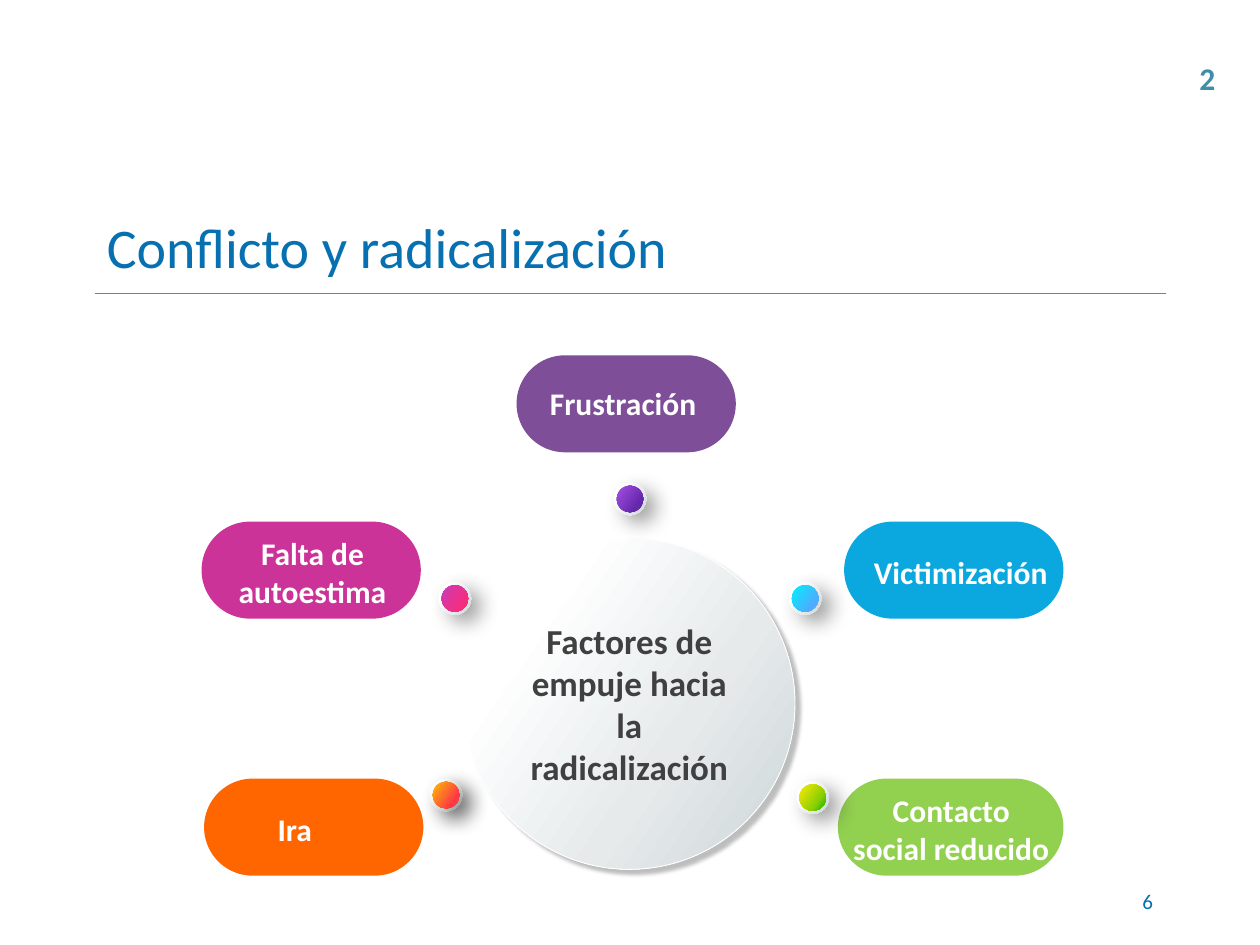
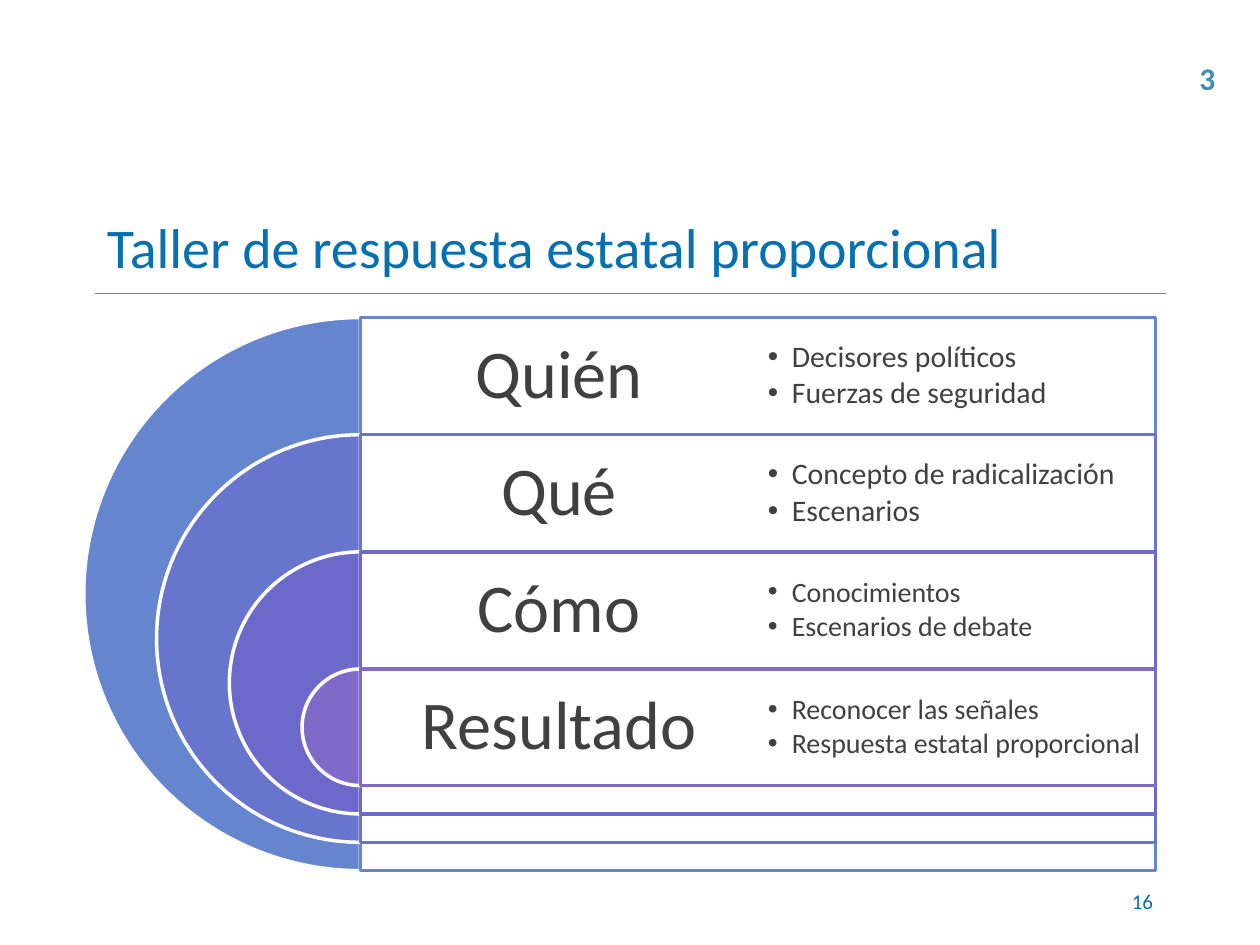
from lxml import etree
from pptx import Presentation
from pptx.dml.color import RGBColor
from pptx.enum.shapes import MSO_CONNECTOR, MSO_SHAPE
from pptx.enum.text import MSO_ANCHOR, PP_ALIGN
from pptx.oxml.ns import qn
from pptx.util import Emu, Inches, Pt

LINE = MSO_CONNECTOR.STRAIGHT
OVAL, PILL = MSO_SHAPE.OVAL, MSO_SHAPE.ROUNDED_RECTANGLE
PIE, BOX = MSO_SHAPE.PIE, MSO_SHAPE.RECTANGLE
TOP, MIDDLE = MSO_ANCHOR.TOP, MSO_ANCHOR.MIDDLE
LEFT, CENTER, RIGHT = PP_ALIGN.LEFT, PP_ALIGN.CENTER, PP_ALIGN.RIGHT

WIDTH, HEIGHT = Inches(10), Inches(7.5)
COLUMNS, ROWS = 100, 75
FONT = "Calibri"
BLUE, CYAN, TEAL, GRAY, WHITE = "0770B1", "0BA7DF", "3E8EA9", "404040", "FFFFFF"
SILVER = [(23, WHITE), (63, "E6EAEB"), (100, "CDD5D8")]
HUB_SHADOW = {"alpha": 26, "blur": 2, "distance": 3.7}
DOT_SHADOW = {"alpha": 38, "blur": 12, "distance": 7.1}

PILLS = [
    ((16.2, 61.8, 17.4), "FF6600"),
    ((16, 41.4, 17.4), "CC3399"),
    ((41, 28.2, 17.4), "7E4E99"),
    ((67, 41.4, 17.4), CYAN),
    ((66.5, 61.8, 17.9), "92D050"),
]
DOTS = [
    ((34.1, 61.8), [(0, "FFC203"), (37, "FF7D25"), (77, "FF3847")], DOT_SHADOW),
    ((34.8, 46.2), [(1, "C23FC6"), (36, "E1359B"), (98, "FF2A70")], None),
    ((48.7, 38.3), [(0, "A852E6"), (37, "863DC8"), (77, "6428AA")], None),
    ((62.6, 46.2), [(0, "00F2FE"), (37, "28CFFE"), (77, "4FACFE")], None),
    ((63.2, 62), [(0, "FFEA03"), (71, "85CE02"), (98, "0CB100")], None),
]
LABELS = [
    ("Ira", (18.8, 63.9, 9.2, 3.8)),
    ("Falta de autoestima", (16.7, 42, 16.2, 6.8)),
    ("Frustración", (42.7, 30.1, 13.5, 3.8)),
    ("Victimización", (68.8, 43.5, 14.9, 3.8)),
    ("Contacto social reducido", (67.3, 62.4, 16.4, 6.8)),
]
RINGS = [
    ("Quién", "6585CF", 17, ["Decisores políticos", "Fuerzas de seguridad"]),
    ("Qué", "6775CD", 17, ["Concepto de radicalización", "Escenarios"]),
    ("Cómo", "6C69CB", 16, ["Conocimientos", "Escenarios de debate"]),
    ("Resultado", "7E6BC9", 16, ["Reconocer las señales", "Respuesta estatal proporcional"]),
]


def color(code):
    return RGBColor.from_string(code)


def assign(target, values):
    for name, value in values.items():
        setattr(target, name, value)


def add_color(parent, code, alpha=100):
    node = etree.SubElement(parent, qn("a:srgbClr"), val=code)
    if alpha < 100:
        etree.SubElement(node, qn("a:alpha"), val=str(alpha * 1000))


class Deck:
    def __init__(self):
        self.show = Presentation()
        assign(self.show, {"slide_width": WIDTH, "slide_height": HEIGHT})
        self.page = None

    def grid(self, *place):
        units = (WIDTH / COLUMNS, HEIGHT / ROWS)
        return [Emu(round(value * units[index % 2])) for index, value in enumerate(place)]

    def start(self, title, corner, number):
        self.page = self.show.slides.add_slide(self.show.slide_layouts[6])
        self.rule(7.5, 23.3, 92.5, 23.3)
        self.text([title], (7.5, 15.8, 85, 7.5), 32, BLUE, anchor=MIDDLE)
        self.text([number], (71.7, 69.5, 20.8, 4), 12, BLUE, anchor=MIDDLE, align=RIGHT)
        self.text([corner], (94.2, 4.2, 3.3, 4), 18, TEAL, bold=True, wrap=False)

    def rule(self, *ends):
        line = self.page.shapes.add_connector(LINE, *self.grid(*ends))
        line.line.color.rgb = color(CYAN)
        line.line.width = Pt(0.75)
        etree.SubElement(line._element.spPr, qn("a:effectLst"))

    def shape(self, kind, place, fill, line=None, width=2, adjust=(), alpha=100, shadow=None):
        shape = self.page.shapes.add_shape(kind, *self.grid(*place))
        for index, value in enumerate(adjust):
            shape.adjustments[index] = value
        if isinstance(fill, list):
            self.gradient(shape, fill)
        else:
            shape.fill.solid()
            shape.fill.fore_color.rgb = color(fill)
            if alpha < 100:
                solid = shape._element.spPr.find(qn("a:solidFill"))
                solid.remove(solid[0])
                add_color(solid, fill, alpha)
        if line:
            shape.line.color.rgb = color(line)
            shape.line.width = Pt(width)
        else:
            shape.line.fill.background()
        shape.shadow.inherit = False
        if shadow:
            self.shadow(shape, **shadow)
        return shape

    def gradient(self, shape, stops):
        shape.fill.gradient()
        shape.fill.gradient_angle = 325
        holder = shape._element.spPr.find(qn("a:gradFill")).find(qn("a:gsLst"))
        for stop in list(holder):
            holder.remove(stop)
        for position, code in stops:
            add_color(etree.SubElement(holder, qn("a:gs"), pos=str(position * 1000)), code)

    def shadow(self, shape, alpha, blur, distance):
        effects = shape._element.spPr.find(qn("a:effectLst"))
        values = {"blurRad": Pt(blur), "dist": Pt(distance), "dir": 39 * 60000}
        outer = etree.SubElement(effects, qn("a:outerShdw"), algn="tl", rotWithShape="0")
        for name, value in values.items():
            outer.set(name, str(int(value)))
        add_color(outer, "000000", alpha)

    def text(self, lines, place, *style, **options):
        box = self.page.shapes.add_textbox(*self.grid(*place))
        self.fill_text(box, lines, *style, **options)

    def fill_text(self, box, lines, size, ink, bold=False, align=LEFT, anchor=TOP,
                  inset=(0.1, 0.05), wrap=True, spacing=None, after=0, bullet=False):
        side, edge = map(Inches, inset)
        frame = box.text_frame
        assign(frame, {"word_wrap": wrap, "vertical_anchor": anchor,
                       "margin_left": side, "margin_right": side,
                       "margin_top": edge, "margin_bottom": edge})
        for index, line in enumerate(lines):
            para = frame.add_paragraph() if index else frame.paragraphs[0]
            assign(para, {"alignment": align, "line_spacing": spacing, "space_after": Pt(after)})
            if bullet:
                self.bullet(para)
            span = para.add_run()
            span.text = line
            assign(span.font, {"name": FONT, "size": Pt(size), "bold": bold})
            span.font.color.rgb = color(ink)

    def bullet(self, para):
        properties = para._p.get_or_add_pPr()
        hang = Inches(0.19)
        properties.set("marL", str(int(hang)))
        properties.set("indent", str(-int(hang)))
        etree.SubElement(properties, qn("a:buFont"), typeface="Arial")
        etree.SubElement(properties, qn("a:buChar"), char="•")


def build_factors(deck):
    deck.start("Conflicto y radicalización", "2", "6")
    hub = deck.shape(OVAL, (36.8, 42.7, 26.3, 26.3), SILVER, WHITE, 0.5, shadow=HUB_SHADOW)
    deck.fill_text(hub, ["Factores de empuje hacia la radicalización"], 20, GRAY, bold=True,
                   align=CENTER, anchor=MIDDLE, inset=(0.04, 0.05))
    for (left, top, width), fill in PILLS:
        deck.shape(PILL, (left, top, width, 7.7), fill, adjust=[0.5])
    for (left, top), stops, shadow in DOTS:
        deck.shape(OVAL, (left, top, 2.6, 2.6), SILVER, shadow=DOT_SHADOW)
        deck.shape(OVAL, (left + 0.25, top + 0.25, 2.1, 2.1), stops, shadow=shadow)
    for label, place in LABELS:
        deck.text([label], place, 18, WHITE, bold=True, align=CENTER, inset=(0.04, 0.04))


def build_workshop(deck):
    deck.start("Taller de respuesta estatal proporcional", "3", "16")
    axis, first, step, width = 28.6, 25.2, 9.3, 63.1
    half = width / 2
    for index, (heading, tone, size, points) in enumerate(RINGS):
        top = first + index * step
        ring = 43.9 - index * 11.55
        deck.shape(PIE, (axis - ring / 2, top, ring, ring), tone, WHITE, adjust=[54, 162])
        deck.shape(BOX, (axis, top, width, ring), WHITE, tone, alpha=90)
        deck.text([heading], (axis, top, half, step), 39, GRAY, align=CENTER,
                  anchor=MIDDLE, inset=(0.16, 0.16), spacing=0.9)
        deck.text(points, (axis + half, top, half, step), size, GRAY, anchor=MIDDLE,
                  inset=(0.08, 0.08), spacing=0.9, after=2.5, bullet=True)


def main():
    deck = Deck()
    build_factors(deck)
    build_workshop(deck)
    deck.show.save("out.pptx")


if __name__ == "__main__":
    main()
